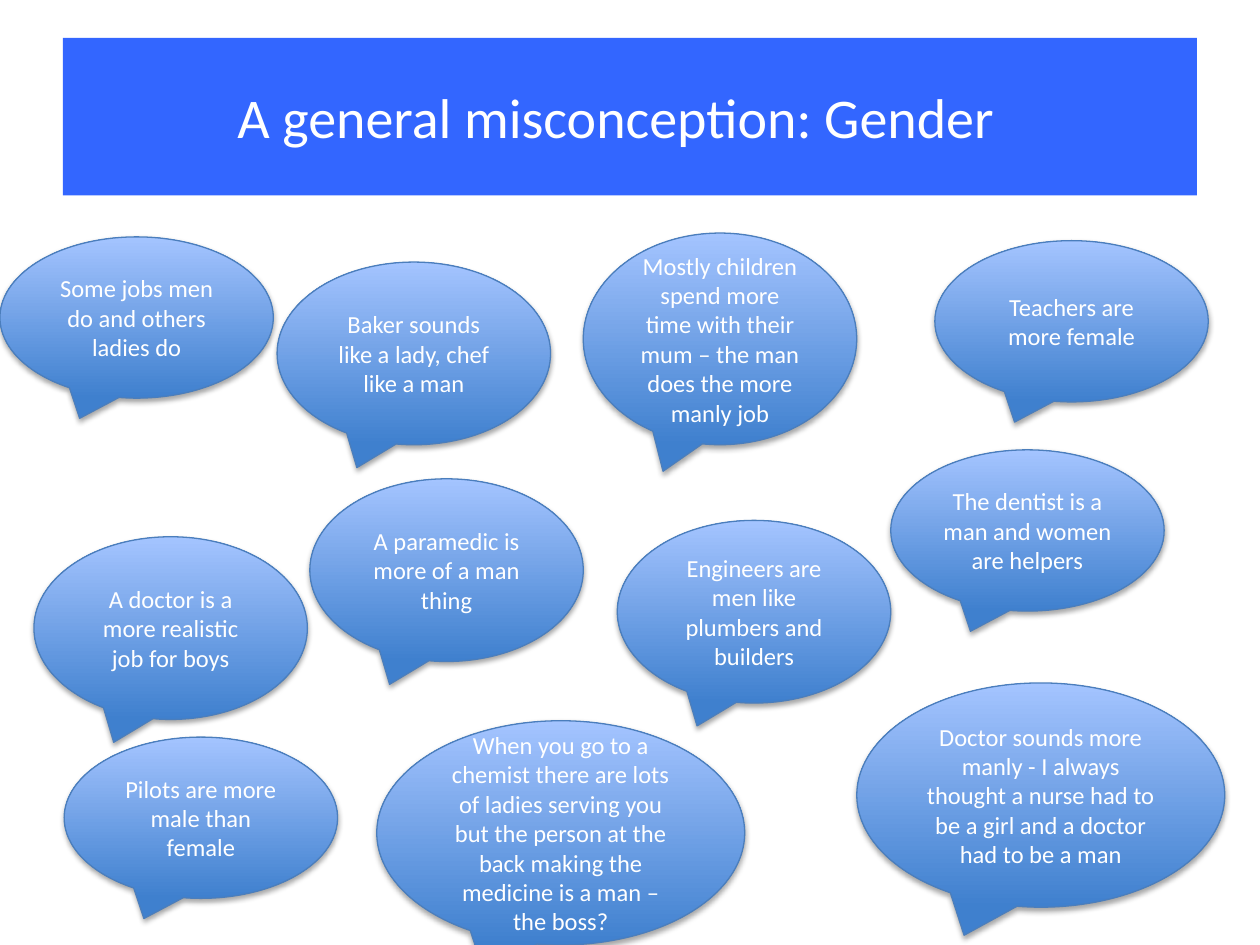
import pptx
import pptx.util
import pptx.dml.color
import pptx.enum.shapes
import pptx.enum.text
import pptx.oxml
import pptx.oxml.ns
from dataclasses import dataclass

Inches = pptx.util.Inches
Pt = pptx.util.Pt
SHAPES = pptx.enum.shapes.MSO_SHAPE


@dataclass(frozen=True)
class Theme:
    font: str = "Calibri"
    title_size: int = 32
    bubble_size: int = 14
    text: str = "FFFFFF"
    banner: str = "3366FF"
    bubble_bottom: str = "3F80CE"
    bubble_top: str = "A4C4FF"
    bubble_line: str = "4B7EBC"
    shadow: str = "000000"


THEME = Theme()

# Bubble sizes: width, height
SMALL = (2.17, 1.28)
MEDIUM = (2.17, 1.45)
TALL = (2.17, 1.68)
LARGE = (2.92, 1.78)

# Bubbles from back to front: left, top, size, words
BUBBLES = [
    (0, 1.88, SMALL, "Some jobs men do and others ladies do"),
    (4.63, 1.85, TALL, "Mostly children spend more time with their mum – the man does the more manly job"),
    (7.42, 1.91, SMALL, "Teachers are more female"),
    (0.51, 5.85, SMALL, "Pilots are more male than female"),
    (2.99, 5.72, LARGE, "When you go to a chemist there are lots of ladies serving you "
                        "but the person at the back making the medicine is a man – the boss?"),
    (6.8, 5.42, LARGE, "Doctor sounds more manly - I always thought a nurse had to be a girl "
                       "and a doctor had to be a man"),
    (2.46, 3.8, MEDIUM, "A paramedic is more of a man thing"),
    (7.07, 3.57, SMALL, "The dentist is a man and women are helpers"),
    (4.9, 4.13, MEDIUM, "Engineers are men like plumbers and builders"),
    (0.27, 4.26, MEDIUM, "A doctor is a more realistic job for boys"),
    (2.2, 2.08, MEDIUM, "Baker sounds like a lady, chef like a man"),
]


def rgb(value):
    return pptx.dml.color.RGBColor.from_string(value)


def add_text_shape(page, kind, box, words, size):
    """Add a shape with centred text in the given box."""
    shape = page.shapes.add_shape(kind, *(Inches(length) for length in box))
    shape.shadow.inherit = False
    frame = shape.text_frame
    frame.word_wrap = True
    frame.vertical_anchor = pptx.enum.text.MSO_ANCHOR.MIDDLE
    para = frame.paragraphs[0]
    para.text = words
    para.alignment = pptx.enum.text.PP_ALIGN.CENTER
    para.font.name = THEME.font
    para.font.size = Pt(size)
    para.font.color.rgb = rgb(THEME.text)
    return shape


def add_soft_shadow(shape):
    effects = shape._element.spPr.find(pptx.oxml.ns.qn("a:effectLst"))
    effects.append(pptx.oxml.parse_xml(
        f'<a:outerShdw {pptx.oxml.ns.nsdecls("a")} blurRad="{Pt(3.1)}" dist="{Pt(1.8)}" '
        f'dir="5400000" rotWithShape="0"><a:srgbClr val="{THEME.shadow}">'
        '<a:alpha val="35000"/></a:srgbClr></a:outerShdw>'))


def add_banner(page, box, words):
    banner = add_text_shape(page, SHAPES.RECTANGLE, box, words, THEME.title_size)
    banner.fill.solid()
    banner.fill.fore_color.rgb = rgb(THEME.banner)
    banner.line.fill.background()
    # A wider right margin sets the title slightly left of centre
    banner.text_frame.margin_right = Inches(0.32)


def add_bubble(page, box, words):
    bubble = add_text_shape(page, SHAPES.OVAL_CALLOUT, box, words, THEME.bubble_size)
    bubble.fill.gradient()
    bubble.fill.gradient_angle = 90
    for stop, color in zip(bubble.fill.gradient_stops, (THEME.bubble_bottom, THEME.bubble_top)):
        stop.color.rgb = rgb(color)
    bubble.line.color.rgb = rgb(THEME.bubble_line)
    bubble.line.width = Pt(0.75)
    add_soft_shadow(bubble)


def main():
    deck = pptx.Presentation()
    deck.slide_width, deck.slide_height = Inches(10), Inches(7.5)
    page = deck.slides.add_slide(deck.slide_layouts[6])

    # Title banner
    add_banner(page, (0.5, 0.3, 9, 1.25), "A general misconception: Gender")

    # Speech bubbles
    for left, top, size, words in BUBBLES:
        add_bubble(page, (left, top, *size), words)

    deck.save("out.pptx")


if __name__ == "__main__":
    main()
